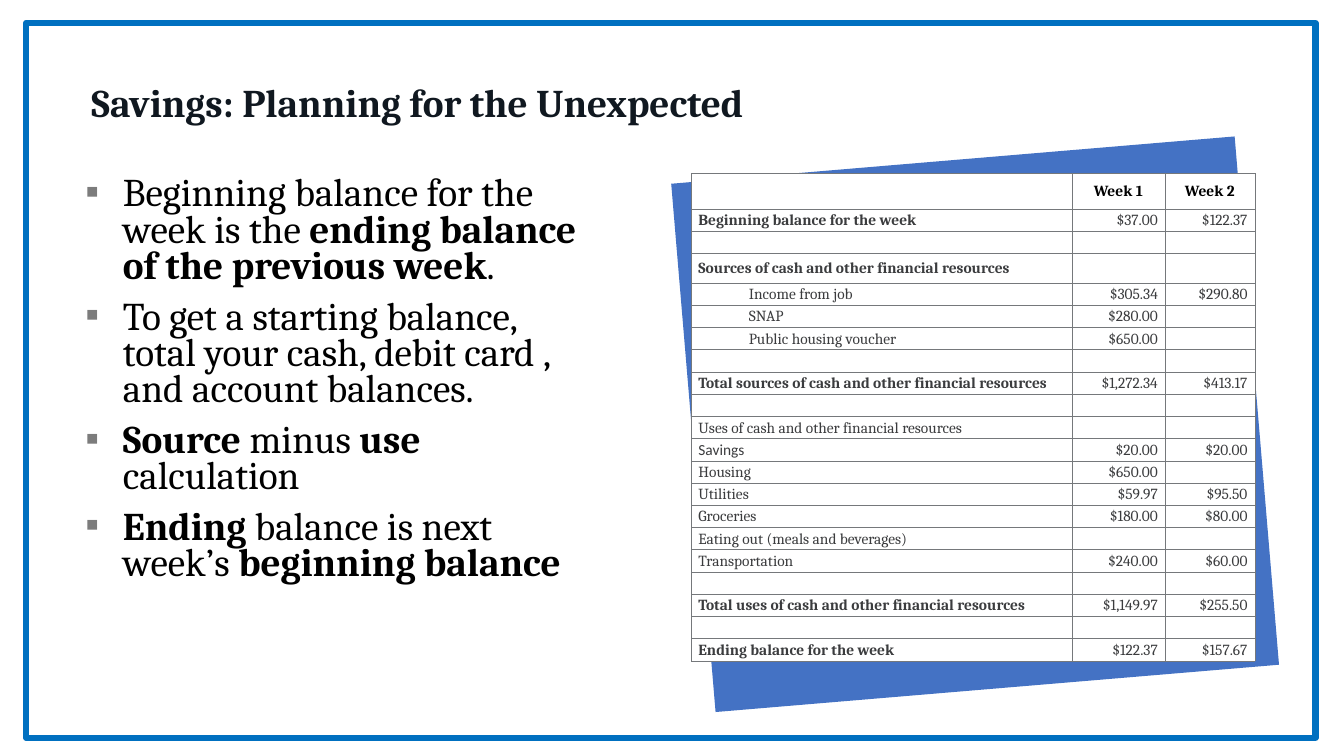
"""Build the savings slide with its key points and two-week cash flow table."""
from lxml.etree import SubElement
from pptx import Presentation
from pptx.dml.color import RGBColor
from pptx.enum.shapes import MSO_SHAPE
from pptx.enum.text import MSO_ANCHOR, PP_ALIGN
from pptx.oxml.ns import qn
from pptx.util import Cm, Pt

TITLE = "Savings: Planning for the Unexpected"
POINTS = [
    [("Beginning balance for the week is the ", False),
     ("ending balance of the previous week", True), (".", False)],
    [("To get a starting balance, total your cash, debit card , and account balances.", False)],
    [("Source", True), (" minus ", False), ("use", True), (" calculation", False)],
    [("Ending ", True), ("balance is next week’s ", False), ("beginning balance", True)],
]
HEADER, BOLD, PLAIN, INDENTED = "header", "bold", "plain", "indented"
BLANK = (PLAIN, "", "", "")
CASH_FLOW = [
    (HEADER, "", "Week 1", "Week 2"),
    (BOLD, "Beginning balance for the week", "$37.00", "$122.37"),
    BLANK,
    (BOLD, "Sources of cash and other financial resources", "", ""),
    (INDENTED, "Income from job", "$305.34", "$290.80"),
    (INDENTED, "SNAP", "$280.00", ""),
    (INDENTED, "Public housing voucher", "$650.00", ""),
    BLANK,
    (BOLD, "Total sources of cash and other financial resources", "$1,272.34", "$413.17"),
    BLANK,
    (PLAIN, "Uses of cash and other financial resources", "", ""),
    (PLAIN, "Savings", "$20.00", "$20.00"),
    (PLAIN, "Housing", "$650.00", ""),
    (PLAIN, "Utilities", "$59.97", "$95.50"),
    (PLAIN, "Groceries", "$180.00", "$80.00"),
    (PLAIN, "Eating out (meals and beverages)", "", ""),
    (PLAIN, "Transportation", "$240.00", "$60.00"),
    BLANK,
    (BOLD, "Total uses of cash and other financial resources", "$1,149.97", "$255.50"),
    BLANK,
    (BOLD, "Ending balance for the week", "$122.37", "$157.67"),
]
COLUMN_WIDTHS = [9.59, 2.35, 2.26]
ROW_HEIGHT = 0.56
TALL_ROWS = {0: 0.89, 3: 0.75}
CALIBRI_LABEL = "Savings"


def color(hex_string):
    return RGBColor.from_string(hex_string)


def set_font(font, size, hex_string, bold=None, name="Cambria"):
    font.name, font.size, font.bold = name, Pt(size), bold
    font.color.rgb = color(hex_string)


def add_bullet(paragraph):
    properties = paragraph._p.get_or_add_pPr()
    properties.set("marL", str(Cm(0.95)))
    properties.set("indent", str(-Cm(0.95)))
    bullet_color = SubElement(properties, qn("a:buClr"))
    SubElement(bullet_color, qn("a:srgbClr"), val="7C7C7C")
    SubElement(properties, qn("a:buFont"), typeface="Arial")
    SubElement(properties, qn("a:buChar"), char="▪")


def add_borders(cell):
    properties = cell._tc.get_or_add_tcPr()
    for side in ("lnL", "lnR", "lnT", "lnB"):
        line = SubElement(properties, qn(f"a:{side}"), w=str(Pt(0.25)))
        fill = SubElement(line, qn("a:solidFill"))
        SubElement(fill, qn("a:srgbClr"), val="75787B")


def add_title(slide):
    title = slide.shapes.title
    title.left, title.top, title.width, title.height = Cm(2.05), Cm(1.27), Cm(29.77), Cm(2.59)
    title.fill.solid()
    title.fill.fore_color.rgb = color("FFFFFF")
    title.text_frame.text = TITLE
    title.text_frame.vertical_anchor = MSO_ANCHOR.MIDDLE
    paragraph = title.text_frame.paragraphs[0]
    paragraph.alignment = PP_ALIGN.LEFT
    set_font(paragraph.font, 28, "101820", True)


def add_points(slide):
    frame = slide.shapes.add_textbox(Cm(1.9), Cm(4.37), Cm(13.21), Cm(13.26)).text_frame
    frame.word_wrap = True
    for index, runs in enumerate(POINTS):
        paragraph = frame.add_paragraph() if index else frame.paragraphs[0]
        paragraph.line_spacing = Pt(26)
        paragraph.space_before = Pt(10)
        add_bullet(paragraph)
        set_font(paragraph.font, 28, "000000")
        for text, bold in runs:
            run = paragraph.add_run()
            run.text = text
            run.font.bold = bold


def add_rectangles(slide):
    frame = slide.shapes.add_shape(MSO_SHAPE.RECTANGLE, Cm(0.66), Cm(0.58), Cm(32.49), Cm(18.01))
    frame.shadow.inherit = False
    frame.fill.background()
    frame.line.color.rgb = color("0070C0")
    frame.line.width = Pt(4.5)

    backdrop = slide.shapes.add_shape(
        MSO_SHAPE.RECTANGLE, Cm(17.45), Cm(4.01), Cm(14.25), Cm(13.36))
    backdrop.shadow.inherit = False
    backdrop.rotation = 355.2
    backdrop.fill.solid()
    backdrop.fill.fore_color.rgb = color("4472C4")
    backdrop.line.fill.background()


def fill_cell(cell, text, style, is_label):
    add_borders(cell)
    cell.fill.solid()
    cell.fill.fore_color.rgb = color("FFFFFF")
    cell.vertical_anchor = MSO_ANCHOR.MIDDLE
    cell.margin_left = cell.margin_right = Cm(0.18)
    cell.margin_top = cell.margin_bottom = 0
    paragraph = cell.text_frame.paragraphs[0]
    paragraph.line_spacing = 1.07
    if not text:
        SubElement(paragraph._p, qn("a:endParaRPr"), sz="1100")
        return
    paragraph.add_run().text = text
    if style == HEADER:
        paragraph.alignment = PP_ALIGN.CENTER
    elif not is_label:
        paragraph.alignment = PP_ALIGN.RIGHT
    elif style == INDENTED:
        paragraph._p.get_or_add_pPr().set("marL", str(Cm(1.27)))
    set_font(paragraph.font, 11, "000000" if style == HEADER else "3B3C3E",
             style == HEADER or (style == BOLD and is_label),
             "Calibri" if text == CALIBRI_LABEL else "Cambria")


def add_cash_flow(slide):
    heights = [TALL_ROWS.get(index, ROW_HEIGHT) for index in range(len(CASH_FLOW))]
    table = slide.shapes.add_table(
        len(CASH_FLOW), len(COLUMN_WIDTHS), Cm(17.42), Cm(4.37),
        Cm(sum(COLUMN_WIDTHS)), Cm(sum(heights))).table
    for column, width in zip(table.columns, COLUMN_WIDTHS):
        column.width = Cm(width)
    for row, height, (style, *texts) in zip(table.rows, heights, CASH_FLOW):
        row.height = Cm(height)
        for index, (cell, text) in enumerate(zip(row.cells, texts)):
            fill_cell(cell, text, style, index == 0)


def main():
    presentation = Presentation()
    presentation.slide_width, presentation.slide_height = Cm(33.87), Cm(19.05)
    slide = presentation.slides.add_slide(presentation.slide_layouts[5])
    add_title(slide)
    add_points(slide)
    add_rectangles(slide)
    add_cash_flow(slide)
    presentation.save("out.pptx")


if __name__ == "__main__":
    main()
